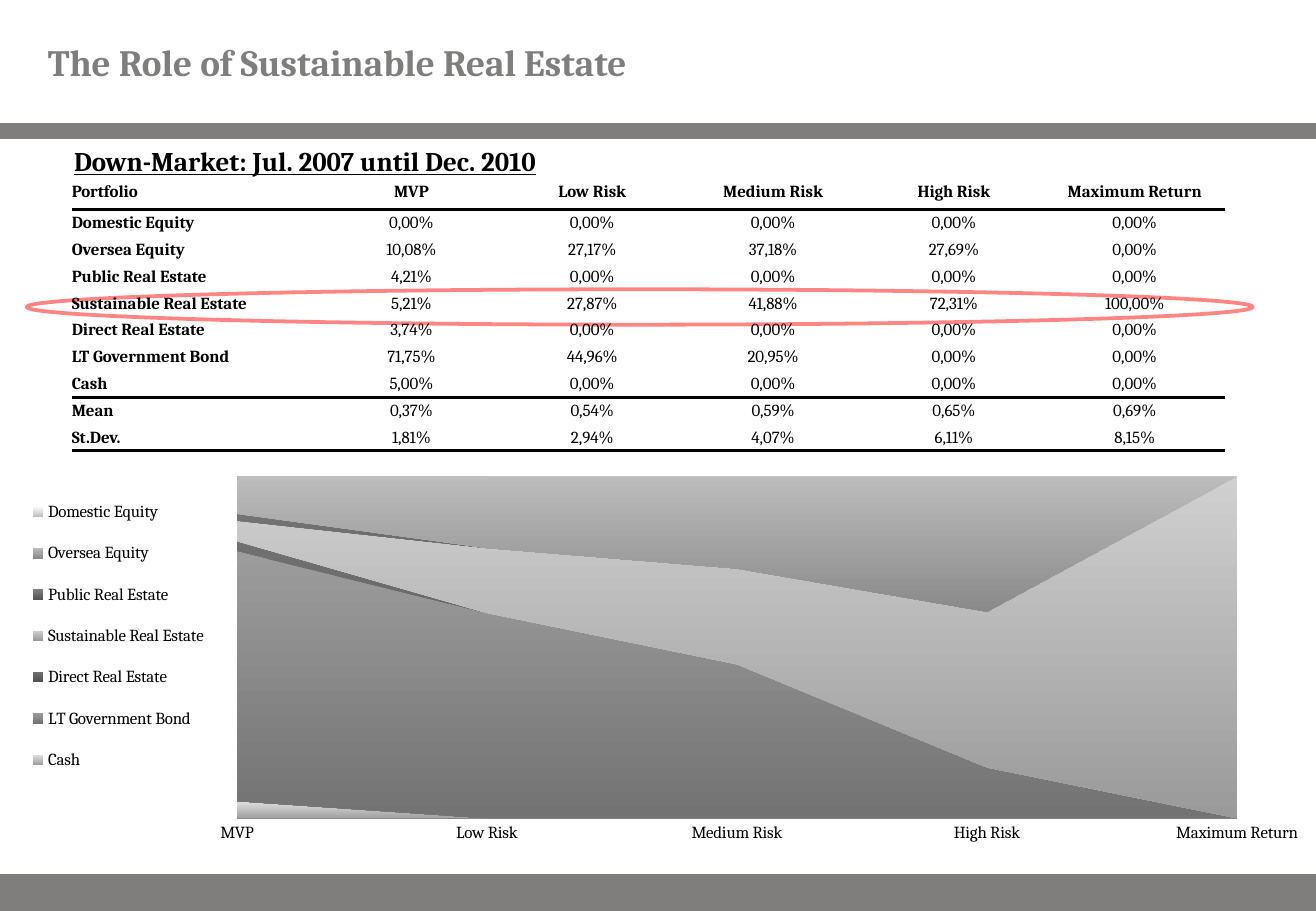
"""Build the slide on the role of sustainable real estate in a down-market."""
from lxml import etree
from pptx import Presentation, util as u
from pptx.chart import data as feed
from pptx.dml.color import RGBColor
from pptx.enum import chart as kinds, shapes, text
from pptx.oxml import parse_xml
from pptx.oxml.ns import nsdecls, qn

HUES = {"grey": "7F7E7D", "ink": "000000", "ring": "FF0000"}
FACE = "Cambria"
RISKS = ["MVP", "Low Risk", "Medium Risk", "High Risk", "Maximum Return"]
ROWS = [
    ["Portfolio"] + RISKS,
    ["Domestic Equity", "0,00%", "0,00%", "0,00%", "0,00%", "0,00%"],
    ["Oversea Equity", "10,08%", "27,17%", "37,18%", "27,69%", "0,00%"],
    ["Public Real Estate", "4,21%", "0,00%", "0,00%", "0,00%", "0,00%"],
    ["Sustainable Real Estate", "5,21%", "27,87%", "41,88%", "72,31%", "100,00%"],
    ["Direct Real Estate", "3,74%", "0,00%", "0,00%", "0,00%", "0,00%"],
    ["LT Government Bond", "71,75%", "44,96%", "20,95%", "0,00%", "0,00%"],
    ["Cash", "5,00%", "0,00%", "0,00%", "0,00%", "0,00%"],
    ["Mean", "0,37%", "0,54%", "0,59%", "0,65%", "0,69%"],
    ["St.Dev.", "1,81%", "2,94%", "4,07%", "6,11%", "8,15%"],
]
RULED = (0, 7, 9)
AREAS = [
    ("Cash", (5, 0, 0, 0, 0), "E0E0E0", "A0A0A0"),
    ("LT Government Bond", (73, 60, 45, 15, 0), "9C9C9C", "737373"),
    ("Direct Real Estate", (3, 0, 0, 0, 0), "707070", "505050"),
    ("Sustainable Real Estate", (6, 19, 28, 46, 100), "D0D0D0", "9A9A9A"),
    ("Public Real Estate", (2, 0, 0, 0, 0), "808080", "555555"),
    ("Oversea Equity", (11, 21, 27, 40, 0), "BCBCBC", "8A8A8A"),
    ("Domestic Equity", (0, 0, 0, 0, 0), "F8F8F8", "C0C0C0"),
]


def style(font, size, hue, bold=False):
    font.name, font.size, font.bold = FACE, u.Pt(size), bold
    font.color.rgb = RGBColor.from_string(HUES[hue])


def place(node, spot, inner, box):
    for old in node.findall(qn("c:layout")):
        node.remove(old)
    parts = "".join(f'<c:{tag} val="{val}"/>' for tag, val in zip("xywh", box))
    target = '<c:layoutTarget val="inner"/>' if inner else ""
    modes = '<c:xMode val="edge"/><c:yMode val="edge"/>'
    node.insert(spot, parse_xml(
        f'<c:layout {nsdecls("c")}><c:manualLayout>{target}{modes}{parts}'
        "</c:manualLayout></c:layout>"))


deck = Presentation()
deck.slide_width, deck.slide_height = u.Cm(27.51), u.Cm(19.05)
slide = deck.slides.add_slide(deck.slide_layouts[6])
grey = RGBColor.from_string(HUES["grey"])

rule = slide.shapes.add_connector(
    shapes.MSO_CONNECTOR.STRAIGHT, 0, u.Cm(2.74), deck.slide_width, u.Cm(2.74))
rule.line.color.rgb = grey
rule.line.width = u.Pt(10)
etree.SubElement(rule._element.spPr, qn("a:effectLst"))

foot = slide.shapes.add_shape(
    shapes.MSO_SHAPE.RECTANGLE, 0, u.Cm(18.28), deck.slide_width, u.Cm(0.77))
foot.shadow.inherit = False
foot.fill.solid()
foot.fill.fore_color.rgb = grey
foot.line.fill.background()

title = slide.shapes.add_textbox(0, 0, deck.slide_width, u.Cm(2.57))
frame = title.text_frame
frame.word_wrap = True
frame.vertical_anchor = text.MSO_ANCHOR.MIDDLE
frame.margin_left = frame.margin_right = u.Cm(1)
frame.margin_top = frame.margin_bottom = 0
frame.text = "The Role of Sustainable Real Estate"
style(frame.paragraphs[0].runs[0].font, 22, "grey", True)

ring = slide.shapes.add_shape(
    shapes.MSO_SHAPE.OVAL, u.Cm(0.56), u.Cm(6.05), u.Cm(25.63), u.Cm(0.74))
ring.shadow.inherit = False
ring.fill.background()
ring.line.color.rgb = RGBColor.from_string(HUES["ring"])
ring.line.width = u.Pt(2.25)
tint = next(ring._element.spPr.iter(qn("a:srgbClr")))
etree.SubElement(tint, qn("a:alpha"), val="47000")

head = slide.shapes.add_textbox(u.Cm(1.3), u.Cm(2.9), u.Cm(18.95), u.Cm(0.94))
head.text_frame.word_wrap = True
head.text_frame.text = "Down-Market: Jul. 2007 until Dec. 2010"
font = head.text_frame.paragraphs[0].runs[0].font
style(font, 16, "ink", True)
font.underline = True

grid = slide.shapes.add_table(
    len(ROWS), len(ROWS[0]), u.Cm(1.5), u.Cm(3.63), u.Cm(24.13), u.Cm(5.79)).table
grid.first_row = grid.horz_banding = False
grid._tbl.tblPr.find(qn("a:tableStyleId")).text = "{2D5ABB26-0587-4C30-8999-92F81FD0307C}"
for i, col in enumerate(grid.columns):
    col.width = u.Cm(3.78 if i else 5.21)
for i, row in enumerate(ROWS):
    grid.rows[i].height = u.Cm(0.56 if i else 0.76)
    for j, word in enumerate(row):
        cell = grid.cell(i, j)
        cell.fill.background()
        cell.vertical_anchor = text.MSO_ANCHOR.MIDDLE
        cell.margin_left = cell.margin_right = cell.margin_top = cell.margin_bottom = 0
        cell.text_frame.text = word
        para = cell.text_frame.paragraphs[0]
        para.alignment = text.PP_ALIGN.CENTER if j else text.PP_ALIGN.LEFT
        style(para.runs[0].font, 10, "ink", i == 0 or j == 0)
        if i in RULED:
            cell._tc.tcPr.insert(0, parse_xml(
                f'<a:lnB {nsdecls("a")} w="{u.Pt(2)}"><a:solidFill>'
                f'<a:srgbClr val="{HUES["ink"]}"/></a:solidFill></a:lnB>'))

data = feed.CategoryChartData()
data.categories = RISKS
for name, vals, top, base in AREAS:
    data.add_series(name, vals)
chart = slide.shapes.add_chart(
    kinds.XL_CHART_TYPE.AREA_STACKED_100, 0, u.Cm(9.8), deck.slide_width, u.Cm(7.95),
    data).chart
style(chart.font, 10, "ink")
chart.has_title = False
for area, (name, vals, top, base) in zip(chart.plots[0].series, AREAS):
    fill = area.format.fill
    fill.gradient()
    fill.gradient_angle = 270
    for stop, hue in zip(fill.gradient_stops, (top, base)):
        stop.color.rgb = RGBColor.from_string(hue)
    area.format.line.fill.background()

chart.category_axis.major_tick_mark = kinds.XL_TICK_MARK.NONE
chart.category_axis.format.line.color.rgb = grey
chart.value_axis.visible = False
chart.value_axis.has_major_gridlines = True
chart.value_axis.major_gridlines.format.line.color.rgb = grey
chart.has_legend = True
chart.legend.position = kinds.XL_LEGEND_POSITION.LEFT
chart.legend.include_in_layout = False
style(chart.legend.font, 10, "ink")
place(chart.legend._element, 1, False, (0.02, 0.03, 0.14, 0.82))
place(chart._chartSpace.chart.plotArea, 0, True, (0.18, 0.02, 0.76, 0.9))

deck.save("out.pptx")
